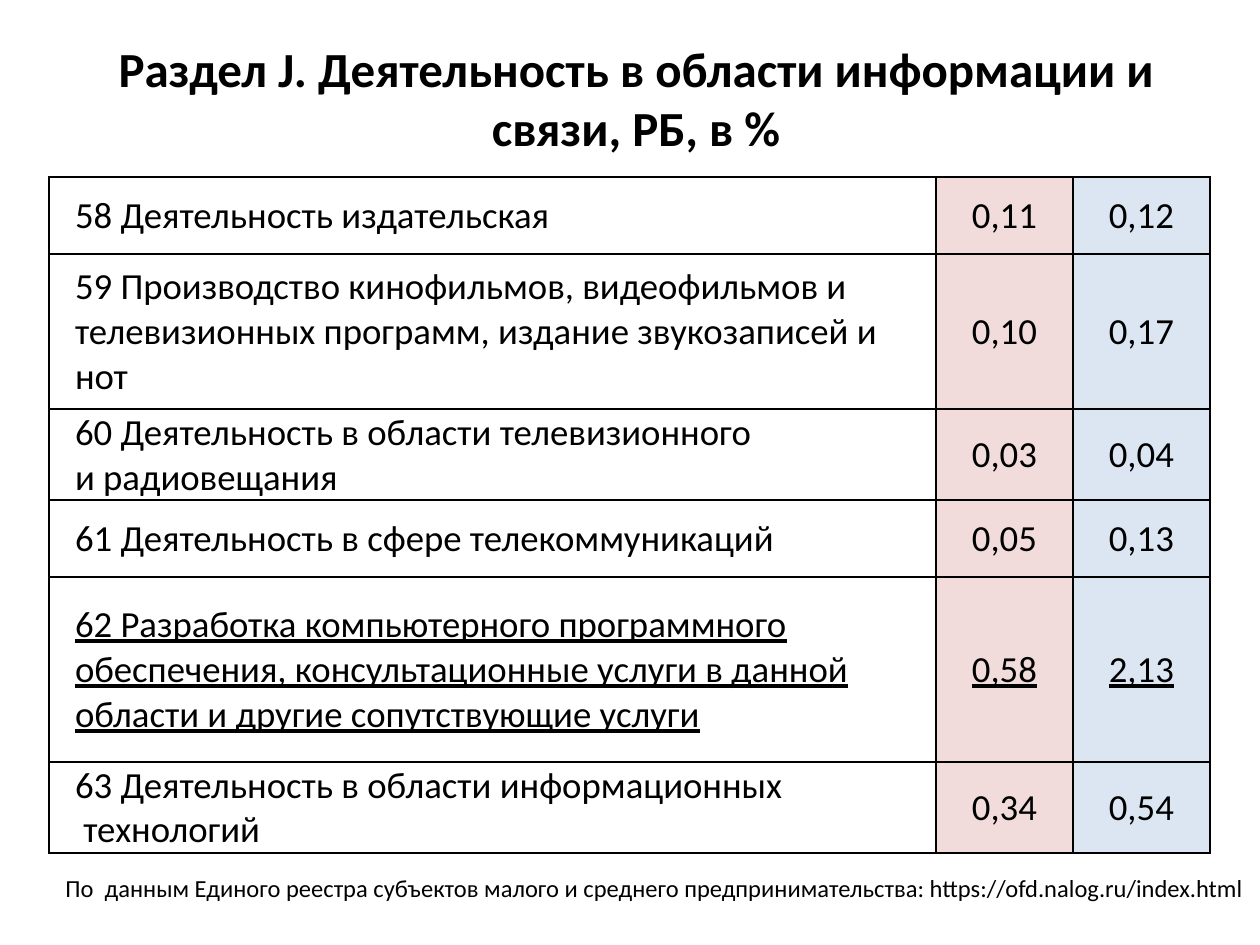
"""Build a slide with a table of information and communication activities."""
from lxml import etree
from pptx import Presentation
from pptx import util as u
from pptx.dml.color import RGBColor
from pptx.enum import text
from pptx.oxml import ns

SCALE = 914400 / 126
BLACK = RGBColor(0x00, 0x00, 0x00)
PINK = RGBColor(0xF2, 0xDC, 0xDB)
BLUE = RGBColor(0xDC, 0xE6, 0xF2)
COLUMNS = [887, 137, 137]
ROWS = [
    (77, "58 Деятельность издательская", "0,11", "0,12"),
    (155, "59 Производство кинофильмов, видеофильмов и телевизионных программ, "
          "издание звукозаписей и нот", "0,10", "0,17"),
    (91, "60 Деятельность в области телевизионного\nи радиовещания", "0,03", "0,04"),
    (77, "61 Деятельность в сфере телекоммуникаций", "0,05", "0,13"),
    (185, "62 Разработка компьютерного программного обеспечения, консультационные "
          "услуги в данной области и другие сопутствующие услуги", "0,58", "2,13"),
    (91, "63 Деятельность в области информационных\n технологий", "0,34", "0,54"),
]
UNDERLINED_ROW = 4


def px(n):
    return u.Emu(round(n * SCALE))


def set_font(p, size, bold=False, underline=False):
    p.font.name = "Calibri"
    p.font.size = u.Pt(size)
    p.font.bold = bold
    p.font.underline = underline
    p.font.color.rgb = BLACK


prs = Presentation()
prs.slide_width, prs.slide_height = px(1260), px(945)
s = prs.slides.add_slide(prs.slide_layouts[6])

sp = s.shapes.add_textbox(px(69), px(39), px(1134), px(117))
tf = sp.text_frame
tf.word_wrap = True
tf.vertical_anchor = text.MSO_ANCHOR.MIDDLE
p = tf.paragraphs[0]
p.text = "Раздел J. Деятельность в области информации и связи, РБ, в %"
p.alignment = text.PP_ALIGN.CENTER
set_font(p, 28, bold=True)

heights = [row[0] for row in ROWS]
table = s.shapes.add_table(len(ROWS), len(COLUMNS), px(49), px(177),
                           px(sum(COLUMNS)), px(sum(heights))).table
table.first_row = False
table.horz_banding = False
for col, width in zip(table.columns, COLUMNS):
    col.width = px(width)

for i, (height, *values) in enumerate(ROWS):
    table.rows[i].height = px(height)
    for j, value in enumerate(values):
        cell = table.cell(i, j)
        cell.margin_left = cell.margin_right = cell.margin_top = px(1)
        cell.margin_bottom = 0
        cell.vertical_anchor = text.MSO_ANCHOR.MIDDLE
        tcPr = cell._tc.get_or_add_tcPr()
        for side in ("a:lnL", "a:lnR", "a:lnT", "a:lnB"):
            ln = etree.SubElement(tcPr, ns.qn(side), w=str(u.Pt(1)))
            fill = etree.SubElement(ln, ns.qn("a:solidFill"))
            etree.SubElement(fill, ns.qn("a:srgbClr"), val=str(BLACK))
        if j:
            cell.fill.solid()
            cell.fill.fore_color.rgb = (PINK, BLUE)[j - 1]
        else:
            cell.fill.background()
        cell.text_frame.text = value
        for p in cell.text_frame.paragraphs:
            set_font(p, 21, underline=i == UNDERLINED_ROW)
            if j:
                p.alignment = text.PP_ALIGN.CENTER
            else:
                p.level = 1
                pPr = p._p.get_or_add_pPr()
                pPr.set("marL", str(px(25)))
                pPr.set("indent", "0")

sp = s.shapes.add_textbox(px(53), px(867), px(1207), px(43))
tf = sp.text_frame
tf.word_wrap = False
tf.auto_size = text.MSO_AUTO_SIZE.SHAPE_TO_FIT_TEXT
p = tf.paragraphs[0]
p.text = ("По  данным Единого реестра субъектов малого и среднего "
          "предпринимательства: https://ofd.nalog.ru/index.html")
set_font(p, 14)

prs.save("out.pptx")
